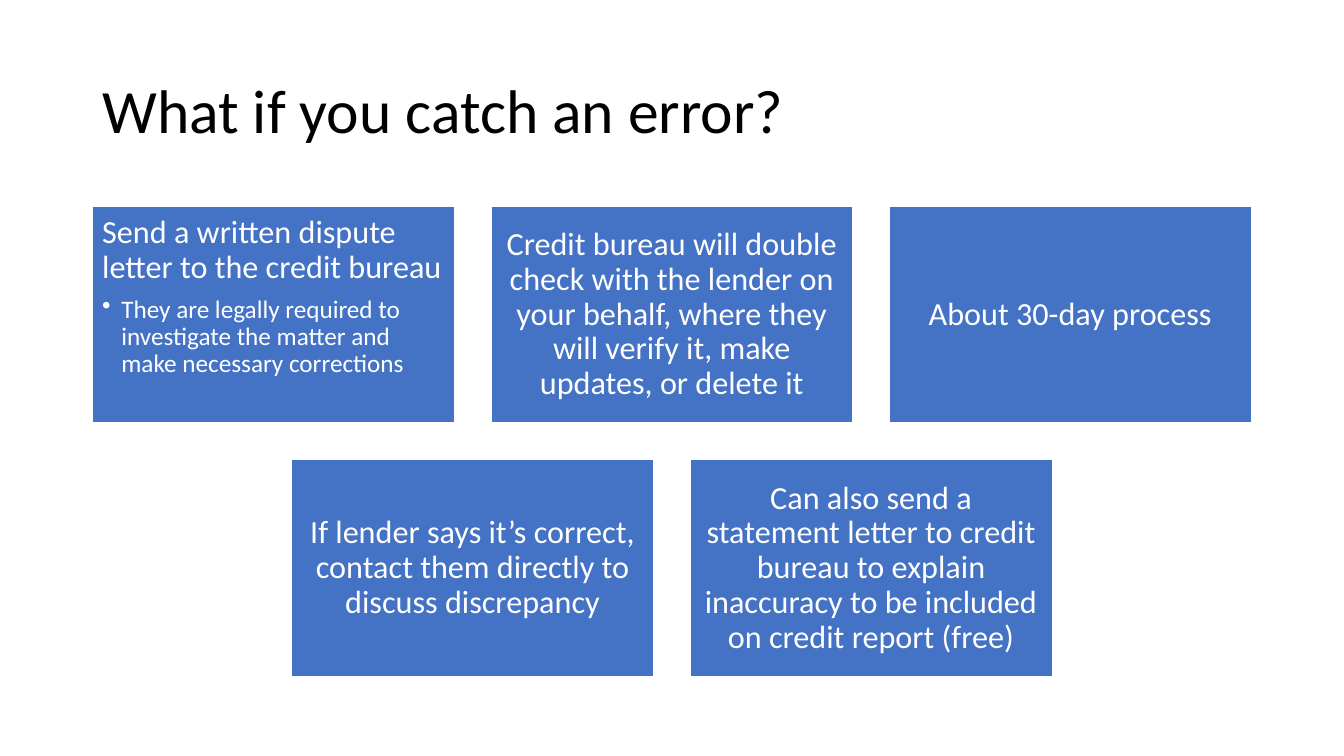
"""Build the slide on what to do about a credit report error."""
from lxml import etree
from pptx import Presentation
from pptx.dml.color import RGBColor
from pptx.enum.shapes import MSO_SHAPE
from pptx.enum.text import MSO_ANCHOR, MSO_AUTO_SIZE, PP_ALIGN
from pptx.oxml.ns import qn
from pptx.util import Pt

RECTANGLE = MSO_SHAPE.RECTANGLE
TOP, MIDDLE = MSO_ANCHOR.TOP, MSO_ANCHOR.MIDDLE
LEFT, CENTER = PP_ALIGN.LEFT, PP_ALIGN.CENTER
NO_AUTOFIT = MSO_AUTO_SIZE.NONE

HEADING = "What if you catch an error?"
STEP_ROWS = [
    [
        ("Send a written dispute letter to the credit bureau",
         ["They are legally required to investigate the matter and make necessary corrections"]),
        ("Credit bureau will double check with the lender on your behalf, "
         "where they will verify it, make updates, or delete it", []),
        ("About 30-day process", []),
    ],
    [
        ("If lender says it’s correct, contact them directly to discuss discrepancy", []),
        ("Can also send a statement letter to credit bureau to explain inaccuracy "
         "to be included on credit report (free)", []),
    ],
]

BLUE, WHITE, BLACK = "4472C4", "FFFFFF", "000000"
SLIDE_W, SLIDE_H = 960, 540
STEP_W, STEP_H, GAP = 258.6, 155.2, 26
FIRST_ROW_TOP = 147.1
INSET = 6.9
BULLET_INDENT = 13.7


def color(hex_value):
    return RGBColor.from_string(hex_value)


def style(paragraph, size, hex_value, align, space_after=0):
    paragraph.font.name = "Calibri"
    paragraph.font.size = Pt(size)
    paragraph.font.color.rgb = color(hex_value)
    paragraph.alignment = align
    paragraph.line_spacing = 0.9
    paragraph.space_before = Pt(0)
    paragraph.space_after = Pt(space_after)


def add_bullet(paragraph):
    properties = paragraph._p.get_or_add_pPr()
    properties.set("marL", str(Pt(BULLET_INDENT)))
    properties.set("indent", str(-Pt(BULLET_INDENT)))
    etree.SubElement(properties, qn("a:buChar")).set("char", "•")


def add_heading(slide):
    heading = slide.shapes.title
    heading.left, heading.top = Pt(66), Pt(28.75)
    heading.width, heading.height = Pt(828), Pt(104.4)
    frame = heading.text_frame
    frame.text = HEADING
    frame.auto_size = NO_AUTOFIT
    frame.vertical_anchor = MIDDLE
    style(frame.paragraphs[0], 44, BLACK, LEFT)


def add_step(slide, left, top, message, details):
    step = slide.shapes.add_shape(RECTANGLE, Pt(left), Pt(top), Pt(STEP_W), Pt(STEP_H))
    step.shadow.inherit = False
    step.fill.solid()
    step.fill.fore_color.rgb = color(BLUE)
    step.line.color.rgb = color(WHITE)
    step.line.width = Pt(1)
    frame = step.text_frame
    frame.word_wrap = True
    frame.margin_left = frame.margin_right = Pt(INSET)
    frame.margin_top = frame.margin_bottom = Pt(INSET)
    frame.vertical_anchor = TOP if details else MIDDLE
    frame.text = message
    style(frame.paragraphs[0], 23, WHITE, LEFT if details else CENTER, 8 if details else 0)
    for detail in details:
        point = frame.add_paragraph()
        point.text = detail
        point.level = 1
        style(point, 18, WHITE, LEFT, 3)
        add_bullet(point)


def main():
    deck = Presentation()
    deck.slide_width, deck.slide_height = Pt(SLIDE_W), Pt(SLIDE_H)
    slide = deck.slides.add_slide(deck.slide_layouts[5])
    add_heading(slide)
    for row, steps in enumerate(STEP_ROWS):
        row_width = len(steps) * (STEP_W + GAP) - GAP
        row_left = (SLIDE_W - row_width) / 2
        top = FIRST_ROW_TOP + row * (STEP_H + GAP)
        for column, (message, details) in enumerate(steps):
            add_step(slide, row_left + column * (STEP_W + GAP), top, message, details)
    deck.save("out.pptx")


if __name__ == "__main__":
    main()
